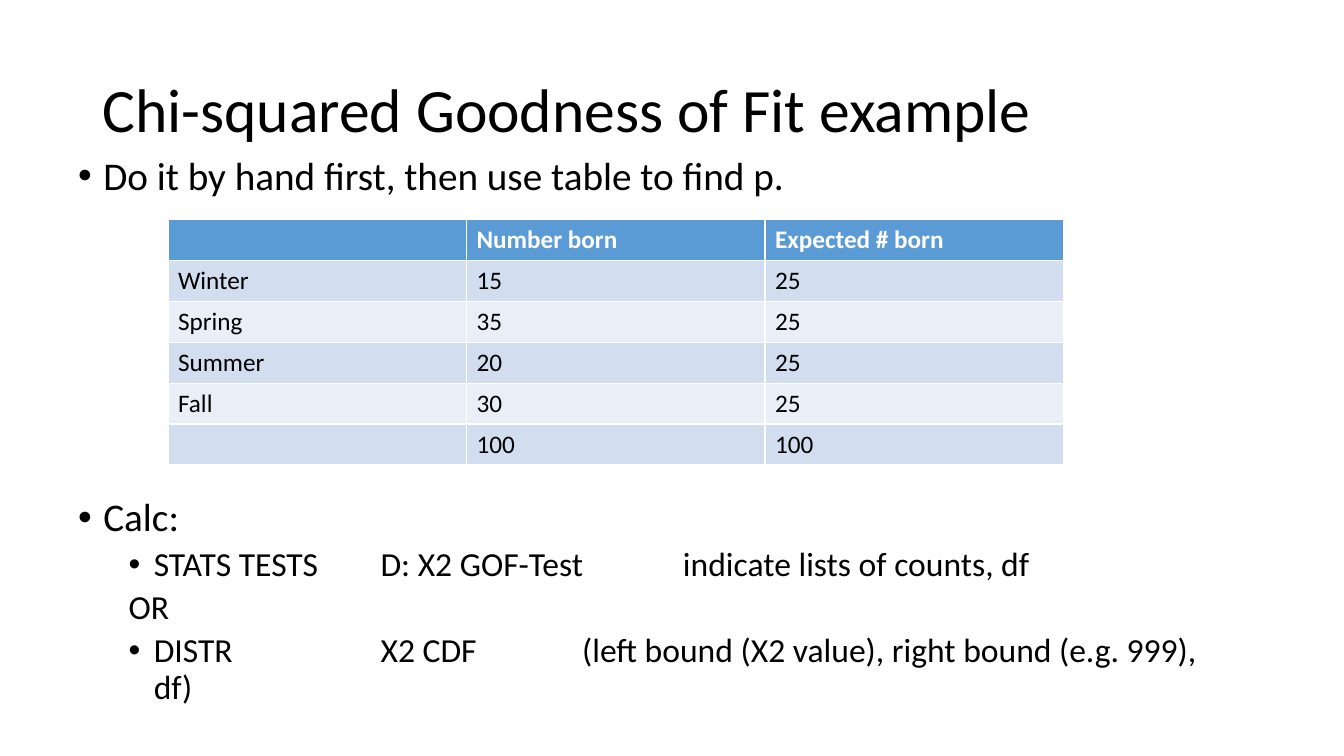
from lxml.etree import SubElement
from pptx import Presentation
from pptx.dml.color import RGBColor
from pptx.enum.text import MSO_ANCHOR as Anchor
from pptx.oxml.ns import qn
from pptx.util import Pt

PX = 9525
FONT = "Calibri"
COLORS = {"text": "000000", "white": "FFFFFF", "header": "5B9BD5", "odd": "D2DEEF", "even": "EAEFF7"}
BIRTHS = [
    ("", "Number born", "Expected # born"),
    ("Winter", "15", "25"),
    ("Spring", "35", "25"),
    ("Summer", "20", "25"),
    ("Fall", "30", "25"),
    ("", "100", "100"),
]
STEPS = [
    ("Do it by hand first, then use table to find p.", 28, 10, 24, True),
    ("Calc:", 28, 214, 24, True),
    ("STATS TESTS\tD: X2 GOF-Test\tindicate lists of counts, df", 24, 5, 72, True),
    ("OR", 24, 5, 48, False),
    ("DISTR\t\tX2 CDF\t\t(left bound (X2 value), right bound (e.g. 999), df)", 24, 5, 72, True),
]


def style_font(font, size, color="text", bold=False):
    """Set the typeface, size, colour and weight of a font."""
    font.name, font.size, font.bold = FONT, Pt(size), bold
    font.color.rgb = RGBColor.from_string(COLORS[color])


def add_text_frame(slide, box):
    """Add a wrapping text box and return its frame."""
    frame = slide.shapes.add_textbox(*(length * PX for length in box)).text_frame
    frame.word_wrap = True
    return frame


def add_title(slide, box, text):
    """Add the slide title, centred vertically in its box."""
    frame = add_text_frame(slide, box)
    frame.vertical_anchor = Anchor.MIDDLE
    paragraph = frame.paragraphs[0]
    paragraph.text, paragraph.line_spacing = text, 0.9
    style_font(paragraph.font, 44)


def set_indent(paragraph, margin, bulleted):
    """Indent a paragraph, with a hanging bullet if wanted, and space its tabs."""
    properties = paragraph._p.get_or_add_pPr()
    properties.set("marL", str(margin * PX))
    properties.set("indent", str(-24 * PX if bulleted else 0))
    properties.set("defTabSz", str(96 * PX))
    if bulleted:
        SubElement(properties, qn("a:buFont"), typeface="Arial")
        SubElement(properties, qn("a:buChar"), char="•")


def add_steps(slide, box, steps):
    """Add the instructions above and below the table."""
    frame = add_text_frame(slide, box)
    for index, (text, size, space, margin, bulleted) in enumerate(steps):
        paragraph = frame.add_paragraph() if index else frame.paragraphs[0]
        paragraph.text, paragraph.line_spacing = text, 0.9
        paragraph.space_before = Pt(space)
        set_indent(paragraph, margin, bulleted)
        style_font(paragraph.font, size)


def add_births_table(slide, box, rows):
    """Add the table of observed and expected births."""
    lengths = (length * PX for length in box)
    table = slide.shapes.add_table(len(rows), len(rows[0]), *lengths).table
    for row, values in enumerate(rows):
        header = row == 0
        fill = "header" if header else "odd" if row % 2 else "even"
        for column, value in enumerate(values):
            cell = table.cell(row, column)
            cell.text = value
            cell.fill.solid()
            cell.fill.fore_color.rgb = RGBColor.from_string(COLORS[fill])
            style_font(cell.text_frame.paragraphs[0].font, 18, "white" if header else "text", header)


def main():
    """Build the slide and save it."""
    presentation = Presentation()
    presentation.slide_width, presentation.slide_height = 1280 * PX, 720 * PX
    slide = presentation.slides.add_slide(presentation.slide_layouts[6])
    add_title(slide, (88, 38, 1104, 139), "Chi-squared Goodness of Fit example")
    add_steps(slide, (65, 144, 1127, 540), STEPS)
    add_births_table(slide, (160, 209, 853, 234), BIRTHS)
    presentation.save("out.pptx")


if __name__ == "__main__":
    main()
